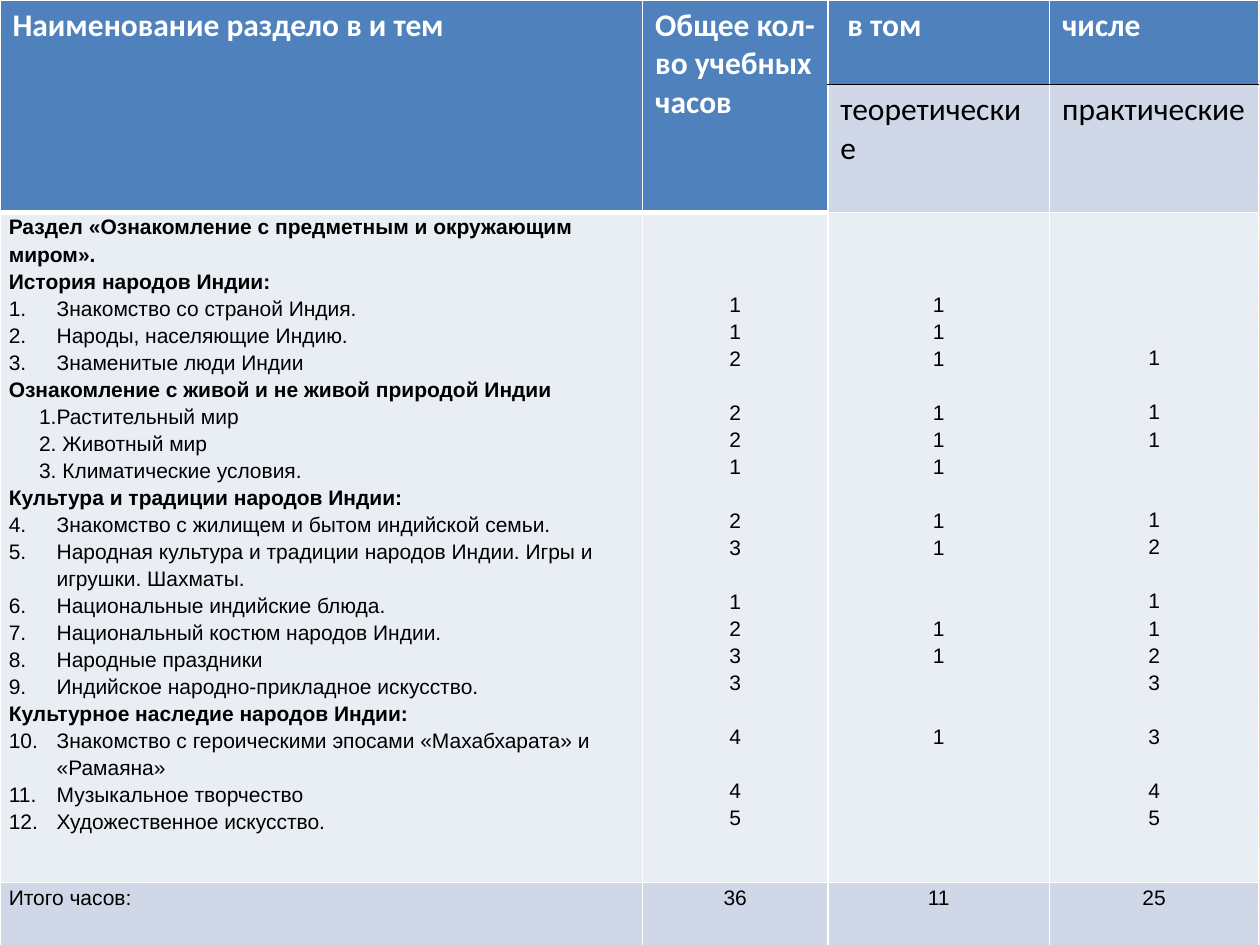
from dataclasses import dataclass

from lxml import etree
from pptx import Presentation
from pptx.dml.color import RGBColor
from pptx.enum.text import PP_ALIGN
from pptx.oxml import parse_xml
from pptx.oxml.ns import qn
from pptx.util import Inches, Pt

LEFT, CENTER = PP_ALIGN.LEFT, PP_ALIGN.CENTER
NS = "http://schemas.openxmlformats.org/drawingml/2006/main"


@dataclass(frozen=True)
class Theme:
    header: str = "4F81BD"
    band: str = "D0D8E8"
    body: str = "E9EDF4"
    white: str = "FFFFFF"
    black: str = "000000"
    header_font: str = "Calibri"
    body_font: str = "Arial"
    header_size: int = 18
    body_size: int = 12
    line_spacing: float = 1.15
    line_height: float = 0.214
    backdrop: tuple = ((0, "FBEAC7"), (18, "FEE7F2"), (36, "FAC77D"),
                       (61, "FBA97D"), (82, "FBD49C"), (100, "FEE7F2"))


T = Theme()
COLS = (5.1, 1.47, 1.76, 1.66)
ROWS = (0.67, 0.72, 5.32, 0.58)
TOTALS = ("Итого часов:", "36", "11", "25")
HEADING, NUMBERED, INDENTED = "heading", "numbered", "indented"

# kind, text, lines taken, (total, theory, practice)
PLAN = (
    (HEADING, "Раздел «Ознакомление с предметным и окружающим миром».", 2, ()),
    (HEADING, "История народов Индии:", 1, ()),
    (NUMBERED, "Знакомство со страной Индия.", 1, (1, 1, None)),
    (NUMBERED, "Народы, населяющие Индию.", 1, (1, 1, None)),
    (NUMBERED, "Знаменитые люди Индии", 1, (2, 1, 1)),
    (HEADING, "Ознакомление с живой и не живой природой Индии", 1, ()),
    (INDENTED, "1.Растительный мир", 1, (2, 1, 1)),
    (INDENTED, "2. Животный мир", 1, (2, 1, 1)),
    (INDENTED, "3. Климатические условия.", 1, (1, 1, None)),
    (HEADING, "Культура и традиции народов Индии:", 1, ()),
    (NUMBERED, "Знакомство с жилищем и бытом индийской семьи.", 1, (2, 1, 1)),
    (NUMBERED, "Народная культура и традиции народов Индии. Игры и игрушки. Шахматы.",
     2, (3, 1, 2)),
    (NUMBERED, "Национальные индийские блюда.", 1, (1, None, 1)),
    (NUMBERED, "Национальный костюм народов Индии.", 1, (2, 1, 1)),
    (NUMBERED, "Народные праздники", 1, (3, 1, 2)),
    (NUMBERED, "Индийское народно-прикладное искусство.", 1, (3, None, 3)),
    (HEADING, "Культурное наследие народов Индии:", 1, ()),
    (NUMBERED, "Знакомство с героическими эпосами «Махабхарата» и «Рамаяна»",
     2, (4, 1, 3)),
    (NUMBERED, "Музыкальное творчество", 1, (4, None, 4)),
    (NUMBERED, "Художественное искусство.", 1, (5, None, 5)),
)


def set_backdrop(slide):
    fill = slide.background.fill
    fill.gradient()
    fill.gradient_angle = 270
    stops = slide.background._cSld.find(".//" + qn("a:gsLst"))
    for stop in list(stops):
        stops.remove(stop)
    for pos, color in T.backdrop:
        stops.append(parse_xml(f'<a:gs xmlns:a="{NS}" pos="{pos * 1000}">'
                               f'<a:srgbClr val="{color}"/></a:gs>'))


def style_cell(cell, fill, **edges):
    tc_pr = cell._tc.get_or_add_tcPr()
    for side in ("L", "R", "T", "B"):
        color, width = edges.get(side, (T.white, 1))
        tc_pr.append(parse_xml(
            f'<a:ln{side} xmlns:a="{NS}" w="{Pt(width)}"><a:solidFill>'
            f'<a:srgbClr val="{color}"/></a:solidFill></a:ln{side}>'))
    cell.fill.solid()
    cell.fill.fore_color.rgb = RGBColor.from_string(fill)


def set_body_margins(cell, top=0):
    cell.margin_left = cell.margin_right = Inches(0.07)
    cell.margin_top, cell.margin_bottom = Inches(top), 0


def add_text(tf, text, *, font=T.body_font, size=T.body_size, color=T.black,
             bold=False, align=LEFT, spacing=T.line_spacing, before=0,
             indent=0, number_from=None):
    p = tf.paragraphs[0]
    if p.runs:
        p = tf.add_paragraph()
    p.alignment = align
    p.line_spacing = spacing
    p.space_before = Inches(before)
    p_pr = p._p.get_or_add_pPr()
    p_pr.set("marL", str(Inches(indent)))
    p_pr.set("indent", str(-Inches(indent) if number_from else 0))
    if number_from:
        etree.SubElement(p_pr, qn("a:buAutoNum"), type="arabicPeriod",
                         startAt=str(number_from))
    r = p.add_run()
    r.text = text
    r.font.name, r.font.size, r.font.bold = font, Pt(size), bold
    r.font.color.rgb = RGBColor.from_string(color)


def fill_header(table):
    thick, rule = (T.white, 3), (T.black, 1)
    for col in (0, 1):
        table.cell(0, col).merge(table.cell(1, col))
        for row in (0, 1):
            style_cell(table.cell(row, col), T.header, B=thick)
    for col in (2, 3):
        style_cell(table.cell(0, col), T.header, B=rule)
        style_cell(table.cell(1, col), T.band, T=rule)
    fmt = {"font": T.header_font, "size": T.header_size, "spacing": 1.0}
    titles = ("Наименование раздело в и тем", "Общее кол-во учебных часов",
              " в том", "числе")
    for col, title in enumerate(titles):
        add_text(table.cell(0, col).text_frame, title, color=T.white,
                 bold=True, **fmt)
    for col, title in ((2, "теоретические"), (3, "практические")):
        add_text(table.cell(1, col).text_frame, title, **fmt)


def fill_topics(cell):
    set_body_margins(cell)
    count, start = 0, 1
    for kind, text, _, _ in PLAN:
        if kind == NUMBERED:
            count += 1
            add_text(cell.text_frame, text, indent=0.38, number_from=start)
        else:
            start = count + 1
            add_text(cell.text_frame, text, bold=kind == HEADING,
                     indent=0.24 if kind == INDENTED else 0)


def fill_hours(cell, index):
    empty_lines, first = 0, True
    for _, _, lines, hours in PLAN:
        value = hours[index] if hours else None
        if value is None:
            empty_lines += lines
            continue
        gap = empty_lines * T.line_height
        if first:
            set_body_margins(cell, top=gap - 0.03)
        add_text(cell.text_frame, str(value), align=CENTER,
                 before=0 if first else gap)
        empty_lines, first = lines - 1, False


def fill_totals(table):
    for col, text in enumerate(TOTALS):
        cell = table.cell(3, col)
        style_cell(cell, T.band)
        set_body_margins(cell)
        add_text(cell.text_frame, text, align=CENTER if col else LEFT)


def add_plan_table(slide):
    table = slide.shapes.add_table(len(ROWS), len(COLS), 0, 0, Inches(sum(COLS)),
                                   Inches(sum(ROWS))).table
    for column, width in zip(table.columns, COLS):
        column.width = Inches(width)
    for row, height in zip(table.rows, ROWS):
        row.height = Inches(height)
    fill_header(table)
    for col in range(len(COLS)):
        style_cell(table.cell(2, col), T.body, T=(T.white, 3 if col < 2 else 1))
    fill_topics(table.cell(2, 0))
    for index in range(3):
        fill_hours(table.cell(2, index + 1), index)
    fill_totals(table)


def main():
    prs = Presentation()
    prs.slide_width, prs.slide_height = Inches(10), Inches(7.5)
    slide = prs.slides.add_slide(prs.slide_layouts[6])
    set_backdrop(slide)
    add_plan_table(slide)
    prs.save("out.pptx")


if __name__ == "__main__":
    main()
